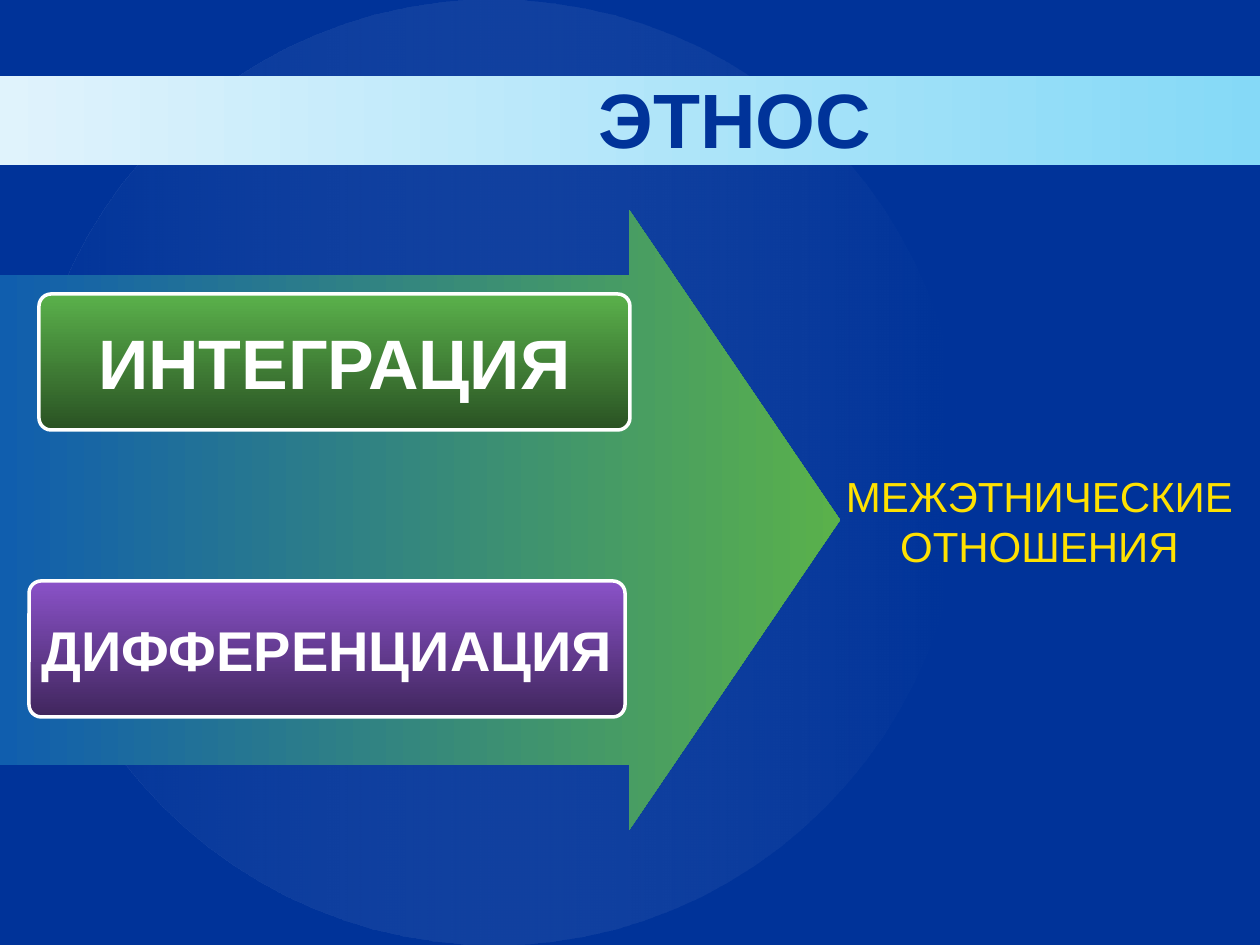
from dataclasses import dataclass

from lxml import etree
from pptx import Presentation
from pptx.dml.color import RGBColor
from pptx.enum import shapes, text
from pptx.oxml.ns import qn
from pptx.util import Pt

EMU_PER_PX = 914400 / 126


@dataclass(frozen=True)
class Theme:
    font: str = "Arial"
    navy: str = "003399"
    white: str = "FFFFFF"
    yellow: str = "FFE101"
    band: tuple = ("E0F3FC", "85D9F7")
    arrow: tuple = ("105EAE", "5AB14B")
    green: tuple = ("5AB14B", "2A5223")
    purple: tuple = ("8A52C8", "40265D")
    title_size: int = 44
    large_size: int = 40
    medium_size: int = 32
    label_size: int = 24
    outline: int = 2
    corner: float = 0.09


THEME = Theme()
KINDS = shapes.MSO_SHAPE


def px(value):
    return round(value * EMU_PER_PX)


def rgb(color):
    return RGBColor.from_string(color)


def add_gradient_shape(page, kind, box, colors, angle=0, alphas=()):
    shape = page.shapes.add_shape(kind, *map(px, box))
    shape.shadow.inherit = False
    shape.line.fill.background()
    shape.fill.gradient()
    shape.fill.gradient_angle = angle
    for stop, color in zip(shape.fill.gradient_stops, colors):
        stop.color.rgb = rgb(color)
    # Opacity of each gradient stop, in percent
    for node, alpha in zip(shape.element.iter(qn("a:srgbClr")), alphas):
        etree.SubElement(node, qn("a:alpha")).set("val", str(alpha * 1000))
    return shape


def write_centred(shape, lines, size, color, bold=False, wrap=True):
    frame = shape.text_frame
    frame.word_wrap = wrap
    frame.vertical_anchor = text.MSO_ANCHOR.MIDDLE
    for index, line in enumerate(lines):
        para = frame.add_paragraph() if index else frame.paragraphs[0]
        para.alignment = text.PP_ALIGN.CENTER
        span = para.add_run()
        span.text = line
        span.font.name = THEME.font
        span.font.size = Pt(size)
        span.font.bold = bold
        span.font.color.rgb = rgb(color)


def add_backdrop(page, box):
    page.background.fill.solid()
    page.background.fill.fore_color.rgb = rgb(THEME.navy)
    add_gradient_shape(page, KINDS.OVAL, box, (THEME.navy, THEME.white),
                       alphas=(27, 0))


def add_title_band(page, box, title):
    left, top, width, height = box
    add_gradient_shape(page, KINDS.RECTANGLE, box, THEME.band)
    title_box = page.shapes.add_textbox(
        px(left + 315), px(top + 3), px(width - 420), px(height - 11))
    write_centred(title_box, [title], THEME.title_size, THEME.navy, bold=True)


def add_button(page, box, caption, colors, size):
    button = add_gradient_shape(page, KINDS.ROUNDED_RECTANGLE, box, colors, angle=270)
    button.adjustments[0] = THEME.corner
    button.line.color.rgb = rgb(THEME.white)
    button.line.width = Pt(THEME.outline)
    write_centred(button, [caption], size, THEME.white, bold=True, wrap=False)


def add_process_arrow(page, box):
    left, top, _, _ = box
    arrow = add_gradient_shape(page, KINDS.RIGHT_ARROW, box, THEME.arrow)
    arrow.adjustments[0] = 0.79
    arrow.adjustments[1] = 0.34
    # Two opposite processes inside the arrow
    add_button(page, (left + 39, top + 84, 591, 136), "ИНТЕГРАЦИЯ",
               THEME.green, THEME.large_size)
    add_button(page, (left + 29, top + 371, 596, 136), "ДИФФЕРЕНЦИАЦИЯ",
               THEME.purple, THEME.medium_size)


def add_result(page, box, lines):
    label = page.shapes.add_textbox(*map(px, box))
    write_centred(label, lines, THEME.label_size, THEME.yellow)


def main():
    deck = Presentation()
    deck.slide_width, deck.slide_height = px(1260), px(945)
    page = deck.slides.add_slide(deck.slide_layouts[6])

    add_backdrop(page, (25, 0, 937, 945))
    add_title_band(page, (0, 76, 1260, 89), "ЭТНОС")
    add_process_arrow(page, (0, 210, 840, 620))
    add_result(page, (819, 431, 441, 179), ["МЕЖЭТНИЧЕСКИЕ", "ОТНОШЕНИЯ"])

    deck.save("out.pptx")


if __name__ == "__main__":
    main()
